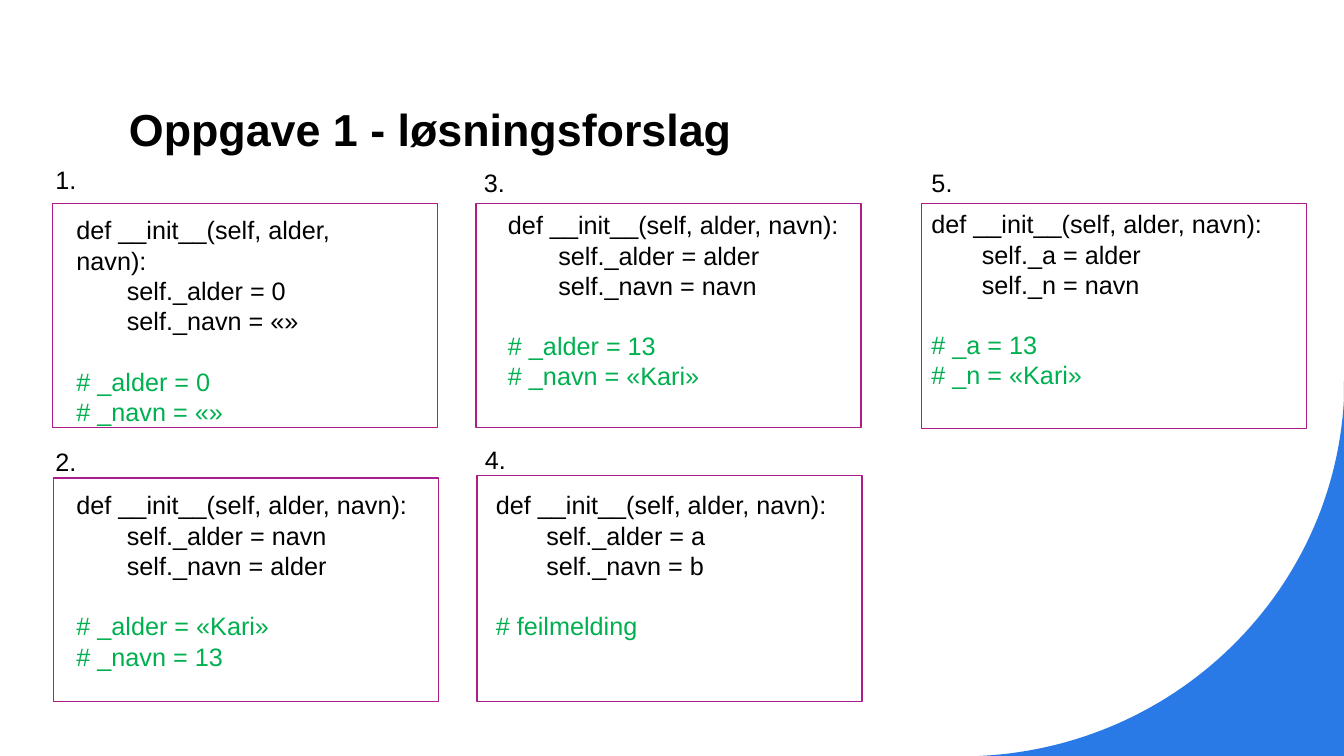
"""Build the slide with suggested solutions to exercise 1."""
from dataclasses import dataclass

from pptx import Presentation
from pptx.dml.color import RGBColor
from pptx.enum import shapes, text
from pptx.util import Inches, Pt

Point = tuple[float, float]


@dataclass(frozen=True)
class Theme:
    font: str = "Arial"
    ink: RGBColor = RGBColor(0x00, 0x00, 0x00)
    result: RGBColor = RGBColor(0x00, 0xB0, 0x50)
    frame: RGBColor = RGBColor(0xAB, 0x1E, 0x89)
    corner: RGBColor = RGBColor(0x29, 0x79, 0xE7)
    title_size: Pt = Pt(32)
    body_size: Pt = Pt(18)
    line_pitch: Pt = Pt(21.6)
    frame_width: Pt = Pt(1)


@dataclass(frozen=True)
class Box:
    left: float
    top: float
    width: float
    height: float

    def emu(self) -> list[int]:
        return [Inches(v) for v in (self.left, self.top, self.width, self.height)]


@dataclass(frozen=True)
class Answer:
    label: Box
    frame: Box
    code: Box
    body: tuple[str, ...]
    results: tuple[str, ...]


THEME = Theme()
SIGNATURE = "def __init__(self, alder, navn):"
ANSWERS = (
    Answer(Box(0.45, 1.58, 1.25, 0.4), Box(0.52, 2.02, 3.82, 2.22), Box(0.66, 2.08, 3.47, 1.92),
           ("self._alder = 0", "self._navn = «»"), ("# _alder = 0", "# _navn = «»")),
    Answer(Box(0.45, 4.38, 1.25, 0.4), Box(0.53, 4.74, 3.82, 2.22), Box(0.66, 4.81, 3.59, 2.22),
           ("self._alder = navn", "self._navn = alder"), ("# _alder = «Kari»", "# _navn = 13")),
    Answer(Box(4.7, 1.61, 1.25, 0.4), Box(4.72, 2.02, 3.82, 2.22), Box(4.94, 2.03, 4.2, 2.22),
           ("self._alder = alder", "self._navn = navn"), ("# _alder = 13", "# _navn = «Kari»")),
    Answer(Box(4.71, 4.36, 1.25, 0.4), Box(4.73, 4.72, 3.82, 2.24), Box(4.82, 4.81, 4.2, 1.62),
           ("self._alder = a", "self._navn = b"), ("# feilmelding",)),
    Answer(Box(9.14, 1.61, 1.25, 0.4), Box(9.14, 2.02, 3.82, 2.23), Box(9.14, 2.02, 4.2, 1.92),
           ("self._a = alder", "self._n = navn"), ("# _a = 13", "# _n = «Kari»")),
)


def bezier(a: Point, b: Point, c: Point, d: Point, steps: int = 60) -> list[Point]:
    points = []
    for i in range(steps + 1):
        t = i / steps
        weights = ((1 - t) ** 3, 3 * t * (1 - t) ** 2, 3 * t * t * (1 - t), t ** 3)
        points.append(tuple(sum(w * q[k] for w, q in zip(weights, (a, b, c, d))) for k in (0, 1)))
    return points


def add_corner(slide) -> None:
    arc = bezier((9.71, 7.5), (11.67, 7.41), (13.23, 5.87), (13.33, 3.96))
    outline = [(13.33, 7.5), (9.63, 7.5), *arc]
    builder = slide.shapes.build_freeform(Inches(13.33), Inches(3.78))
    builder.add_line_segments([(Inches(x), Inches(y)) for x, y in outline], close=True)
    sp = builder.convert_to_shape()
    sp.shadow.inherit = False
    sp.fill.solid()
    sp.fill.fore_color.rgb = THEME.corner
    sp.line.fill.background()


def add_text(slide, box: Box):
    tf = slide.shapes.add_textbox(*box.emu()).text_frame
    tf.word_wrap = True
    return tf


def write(p, content: str, size: Pt, color: RGBColor, spacing: Pt | float, bold: bool = False) -> None:
    p.text = content
    p.line_spacing = spacing
    p.font.name = THEME.font
    p.font.size = size
    p.font.bold = bold
    p.font.color.rgb = color


def add_title(slide, content: str) -> None:
    tf = add_text(slide, Box(1.18, 0.79, 10.88, 0.8))
    tf.vertical_anchor = text.MSO_ANCHOR.BOTTOM
    write(tf.paragraphs[0], content, THEME.title_size, THEME.ink, 1.1, bold=True)


def add_lines(slide, box: Box, lines: list[str], results: tuple[str, ...] = ()) -> None:
    tf = add_text(slide, box)
    for i, line in enumerate([*lines, *results]):
        p = tf.add_paragraph() if i else tf.paragraphs[0]
        color = THEME.ink if i < len(lines) else THEME.result
        write(p, line, THEME.body_size, color, THEME.line_pitch)
        if i == len(lines):
            p.space_before = THEME.line_pitch


def add_frame(slide, box: Box) -> None:
    sp = slide.shapes.add_shape(shapes.MSO_SHAPE.RECTANGLE, *box.emu())
    sp.shadow.inherit = False
    sp.fill.background()
    sp.line.color.rgb = THEME.frame
    sp.line.width = THEME.frame_width


def main() -> None:
    prs = Presentation()
    prs.slide_width, prs.slide_height = Inches(13.33), Inches(7.5)
    slide = prs.slides.add_slide(prs.slide_layouts[6])
    add_corner(slide)
    add_title(slide, "Oppgave 1 - løsningsforslag")
    for number, answer in enumerate(ANSWERS, start=1):
        code = [SIGNATURE, *(f"\t{line}" for line in answer.body)]
        add_lines(slide, answer.code, code, answer.results)
        add_frame(slide, answer.frame)
        add_lines(slide, answer.label, [f"{number}."])
    prs.save("out.pptx")


if __name__ == "__main__":
    main()
